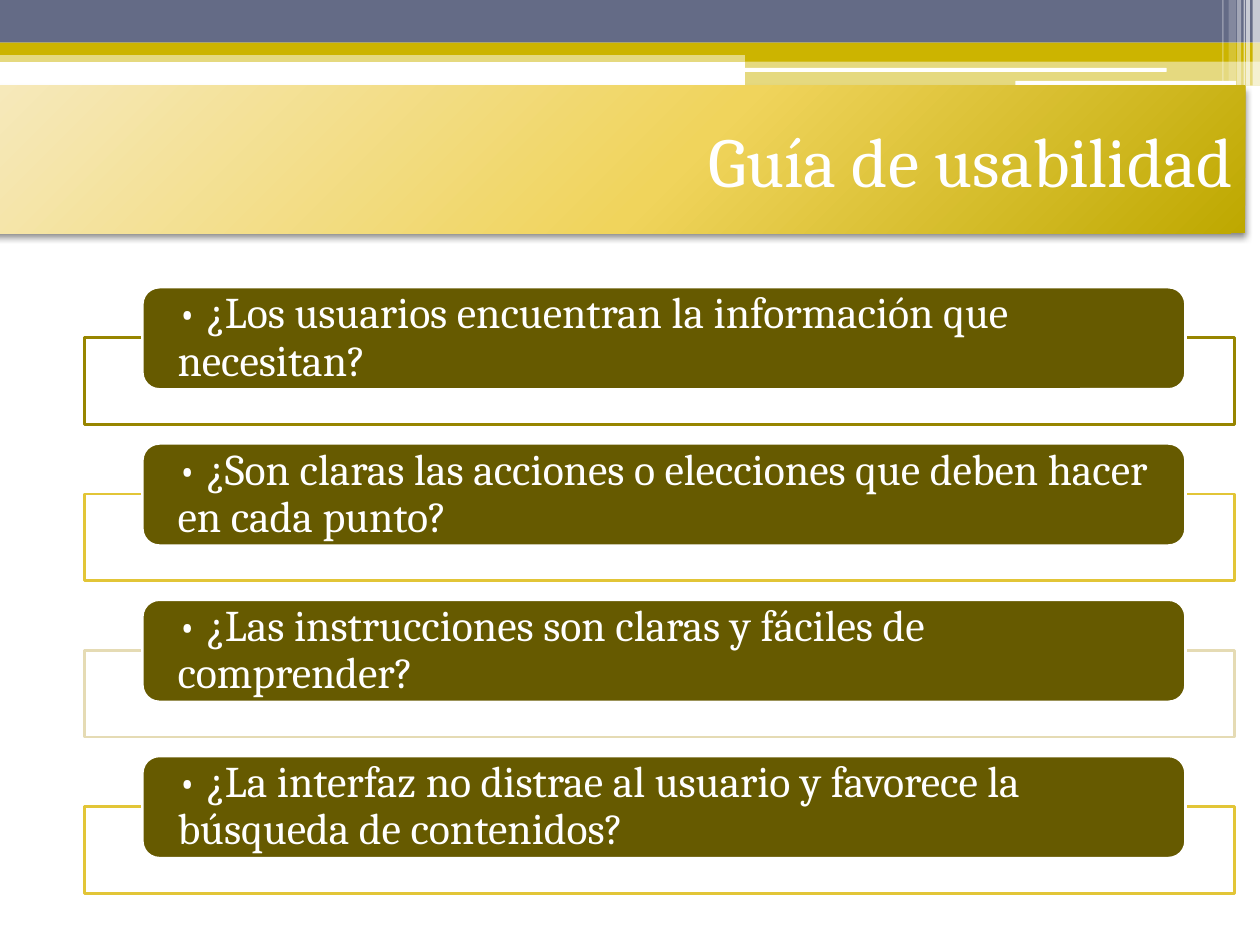
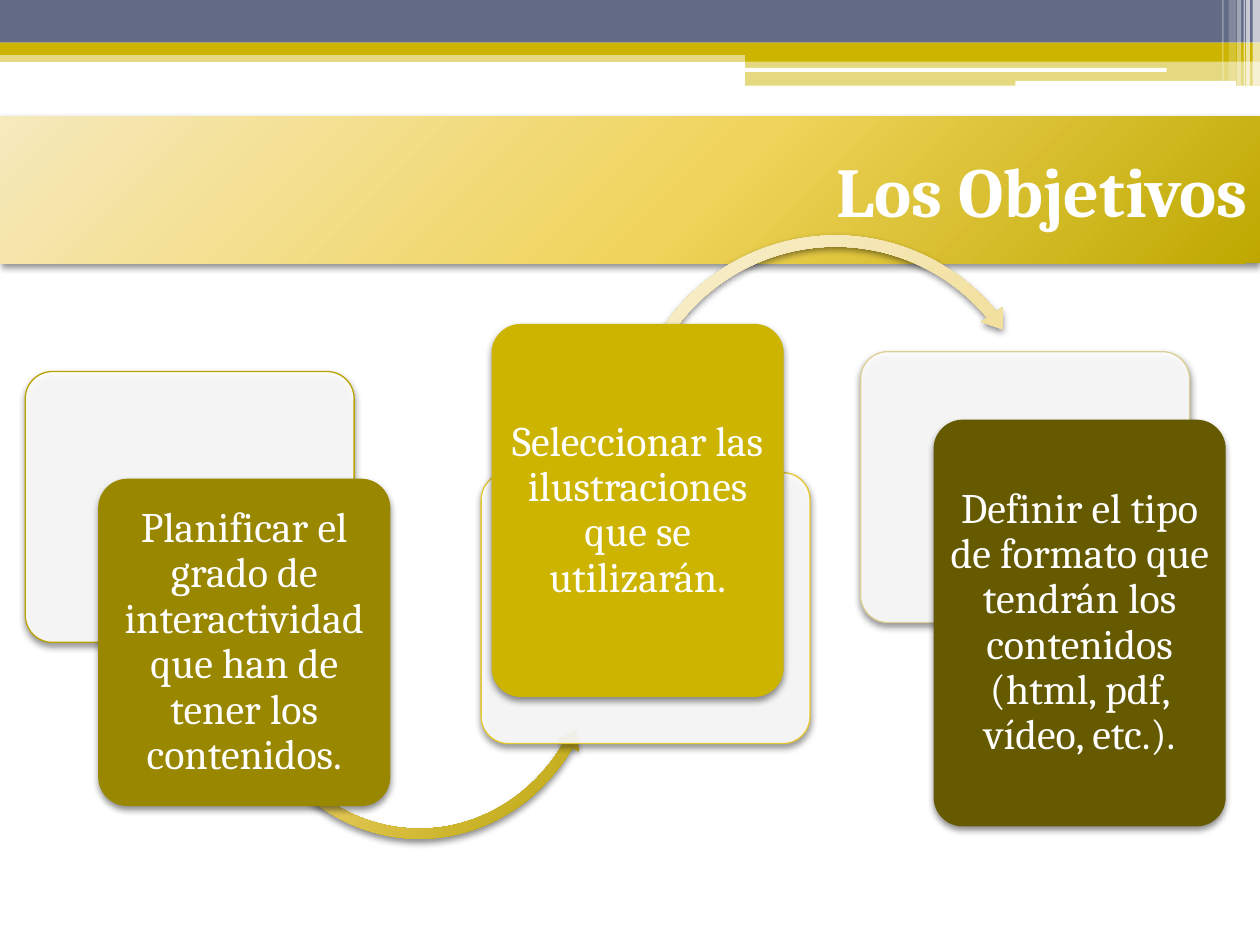
"""Builds two slides: a usability guide and the objectives."""
from lxml.etree import SubElement
from pptx import Presentation
from pptx.dml.color import RGBColor
from pptx.enum.shapes import MSO_SHAPE
from pptx.enum.text import MSO_ANCHOR, PP_ALIGN
from pptx.oxml.ns import qn
from pptx.util import Cm, Pt

RECT = MSO_SHAPE.RECTANGLE
ROUND = MSO_SHAPE.ROUNDED_RECTANGLE
ARC = MSO_SHAPE.CIRCULAR_ARROW
LEFT_ARC = MSO_SHAPE.LEFT_CIRCULAR_ARROW
MIDDLE = MSO_ANCHOR.MIDDLE
LEFT, CENTER, RIGHT = PP_ALIGN.LEFT, PP_ALIGN.CENTER, PP_ALIGN.RIGHT

WHITE = RGBColor(0xFF, 0xFF, 0xFF)
SLATE = RGBColor(0x64, 0x6B, 0x86)
MUSTARD = RGBColor(0xCC, 0xB4, 0x00)
OLIVE = RGBColor(0x99, 0x87, 0x00)
DARK_OLIVE = RGBColor(0x66, 0x5A, 0x00)
OLIVE_LINE = RGBColor(0x97, 0x85, 0x00)
GOLD_LINE = RGBColor(0xE2, 0xC5, 0x37)
SAND_LINE = RGBColor(0xE5, 0xDB, 0xB4)
PANEL_OLIVE = RGBColor(0xB9, 0xA3, 0x00)
PANEL_GOLD = RGBColor(0xE3, 0xC7, 0x33)
PANEL_SAND = RGBColor(0xDD, 0xCF, 0x95)
TITLE_STOPS = (RGBColor(0xF6, 0xE9, 0xBC), RGBColor(0xF0, 0xD4, 0x5C), RGBColor(0xBE, 0xA8, 0x00))
GOLD_STOPS = (RGBColor(0xF2, 0xE6, 0xBD), RGBColor(0xE7, 0xCC, 0x5E), RGBColor(0xB6, 0xA0, 0x00))
SAND_STOPS = (RGBColor(0xF9, 0xF0, 0xD2), RGBColor(0xF2, 0xE0, 0x9E), RGBColor(0xCE, 0xC0, 0x8B))

FONT = "Cambria"
SLIDE_WIDTH, SLIDE_HEIGHT = 25.4, 19.05

BANDS = (
    (RECT, 0, 1.02, SLIDE_WIDTH, 0.23, MUSTARD, 50),
    (RECT, 0, 0, SLIDE_WIDTH, 0.86, SLATE, 100),
    (RECT, 0, 0.86, SLIDE_WIDTH, 0.25, MUSTARD, 100),
    (RECT, 15.02, 0.99, 10.38, 0.25, MUSTARD, 100),
    (RECT, 15.02, 1.23, 10.38, 0.5, MUSTARD, 50),
    (ROUND, 15.01, 1.37, 8.51, 0.08, WHITE, 100),
    (ROUND, 20.47, 1.63, 4.45, 0.1, WHITE, 100),
)
STREAKS = (
    (25.25, 0.15, 1.73, 65),
    (25.12, 0.08, 1.73, 65),
    (25.07, 0.03, 1.73, 60),
    (24.94, 0.08, 1.73, 40),
    (24.77, 0.15, 1.63, 20),
    (24.64, 0.03, 1.63, 30),
)
QUESTIONS = (
    ("• ¿Los usuarios encuentran la información que necesitan?", OLIVE_LINE),
    ("• ¿Son claras las acciones o elecciones que deben hacer en cada punto?", GOLD_LINE),
    ("• ¿Las instrucciones son claras y fáciles de comprender?", SAND_LINE),
    ("• ¿La interfaz no distrae al usuario y favorece la búsqueda de contenidos?", GOLD_LINE),
)
OBJECTIVES = (
    ("Planificar el grado de interactividad que han de tener los contenidos.",
     (0, 2.89), PANEL_OLIVE, (1.47, 5.05), 6.6, OLIVE),
    ("Seleccionar las ilustraciones que se utilizarán.",
     (9.19, 4.93), PANEL_GOLD, (9.4, 1.93), 7.52, MUSTARD),
    ("Definir el tipo de formato que tendrán los contenidos (html, pdf, vídeo, etc.).",
     (16.84, 2.49), PANEL_SAND, (18.31, 3.86), 8.2, DARK_OLIVE),
)
ARROWS = (
    (LEFT_ARC, (4.16, 4.32, 7.57, 8.13), (0.027, 3.33, 20.557, 89.717, 0.032), GOLD_STOPS),
    (ARC, (11.99, 0, 8.69, 8.69), (0.026, 3.108, 192.258, 122.876, 0.03), SAND_STOPS),
)


def add_block(slide, kind, box, fill=None, opacity=100, line=None, line_width=1.5):
    """Add a flat shape with an optional fill, opacity and outline."""
    block = slide.shapes.add_shape(kind, *(Cm(length) for length in box))
    block.shadow.inherit = False
    if fill is not None:
        block.fill.solid()
        block.fill.fore_color.rgb = fill
        if opacity < 100:
            color = block._element.spPr.find(qn("a:solidFill"))[0]
            SubElement(color, qn("a:alpha"), val=str(opacity * 1000))
    if line is None:
        block.line.fill.background()
    else:
        block.line.color.rgb = line
        block.line.width = Pt(line_width)
    return block


def add_soft_shadow(block):
    """Cast a short black shadow straight down."""
    effects = block._element.spPr.find(qn("a:effectLst"))
    shadow = SubElement(effects, qn("a:outerShdw"), blurRad=str(Pt(4)), dist=str(Pt(2)),
                        dir="5400000", algn="ctr", rotWithShape="0")
    color = SubElement(shadow, qn("a:srgbClr"), val="000000")
    SubElement(color, qn("a:alpha"), val="45000")


def add_glow_fill(block, stops):
    """Fill with a three-stop gradient that spreads from beyond the shape."""
    block.fill.gradient()
    gradient = block._element.spPr.find(qn("a:gradFill"))
    for part in list(gradient):
        gradient.remove(part)
    stop_list = SubElement(gradient, qn("a:gsLst"))
    for position, color in zip((0, 55, 100), stops):
        stop = SubElement(stop_list, qn("a:gs"), pos=str(position * 1000))
        SubElement(stop, qn("a:srgbClr"), val=str(color))
    spread = SubElement(gradient, qn("a:path"), {"path": "circle"})
    SubElement(spread, qn("a:fillToRect"), l="-40000", t="-90000", r="140000", b="190000")


def write(block, text, size, align, inset=(0.25, 0.13), spacing=0.9, bold=False):
    """Write one white paragraph in a shape."""
    frame = block.text_frame
    frame.word_wrap = True
    frame.vertical_anchor = MIDDLE
    frame.margin_left = frame.margin_right = Cm(inset[0])
    frame.margin_top = frame.margin_bottom = Cm(inset[1])
    paragraph = frame.paragraphs[0]
    paragraph.text = text
    paragraph.alignment = align
    paragraph.line_spacing = spacing
    paragraph.font.name = FONT
    paragraph.font.size = Pt(size)
    paragraph.font.bold = bold
    paragraph.font.color.rgb = WHITE


def add_header(slide, title, left, top, bold=False):
    """Draw the top bands, the streaks and the title strip."""
    for kind, *box, color, opacity in BANDS:
        add_block(slide, kind, box, color, opacity)
    for streak_left, width, height, opacity in STREAKS:
        add_block(slide, RECT, (streak_left, 0, width, height), WHITE, opacity)
    strip = add_block(slide, RECT, (left, top, SLIDE_WIDTH, 2.97))
    add_glow_fill(strip, TITLE_STOPS)
    add_soft_shadow(strip)
    write(strip, title, 40, RIGHT, spacing=1.0, bold=bold)


def add_questions(slide, left, top, width, height):
    """Stack the question bars over their outlined frames."""
    bar_height, frame_drop, frame_height = 2.06, 1.02, 1.75
    pitch = (height - frame_drop - frame_height) / (len(QUESTIONS) - 1)
    for row, (question, outline) in enumerate(QUESTIONS):
        bar_top = top + row * pitch
        add_block(slide, RECT, (left, bar_top + frame_drop, width, frame_height),
                  WHITE, 90, outline)
        bar = add_block(slide, ROUND, (left + 1.17, bar_top, width - 2.16, bar_height),
                        DARK_OLIVE, line=WHITE)
        write(bar, question, 25, LEFT, inset=(0.61, 0))


def add_arrow(slide, left, top, kind, box, bends, stops):
    """Draw one curved arrow between two objectives."""
    x, y, width, height = box
    arrow = add_block(slide, kind, (left + x, top + y, width, height))
    for index, bend in enumerate(bends):
        arrow.adjustments[index] = bend
    add_glow_fill(arrow, stops)
    add_soft_shadow(arrow)


def add_objectives(slide, left, top):
    """Lay out the objective cards, their panels and the arrows between them."""
    for step, (text, panel_at, outline, card_at, card_height, color) in enumerate(OBJECTIVES):
        panel = add_block(slide, ROUND, (left + panel_at[0], top + panel_at[1], 6.63, 5.46),
                          WHITE, 90, outline, 0.75)
        if step < len(ARROWS):
            add_arrow(slide, left, top, *ARROWS[step])
        card = add_block(slide, ROUND, (left + card_at[0], top + card_at[1], 5.89, card_height),
                         color)
        for rounded in (panel, card):
            rounded.adjustments[0] = 0.1
            add_soft_shadow(rounded)
        write(card, text, 24, CENTER, inset=(0.13, 0.08))


def main():
    """Build and save the presentation."""
    deck = Presentation()
    deck.slide_width, deck.slide_height = Cm(SLIDE_WIDTH), Cm(SLIDE_HEIGHT)
    blank = deck.slide_layouts[6]

    guide = deck.slides.add_slide(blank)
    add_header(guide, "Guía de usabilidad", -0.3, 1.73)
    add_questions(guide, 1.7, 5.79, 23.19, 12.22)

    objectives = deck.slides.add_slide(blank)
    add_header(objectives, "Los Objetivos", 0, 2.34, bold=True)
    add_objectives(objectives, 0.51, 4.6)

    deck.save("out.pptx")


if __name__ == "__main__":
    main()
